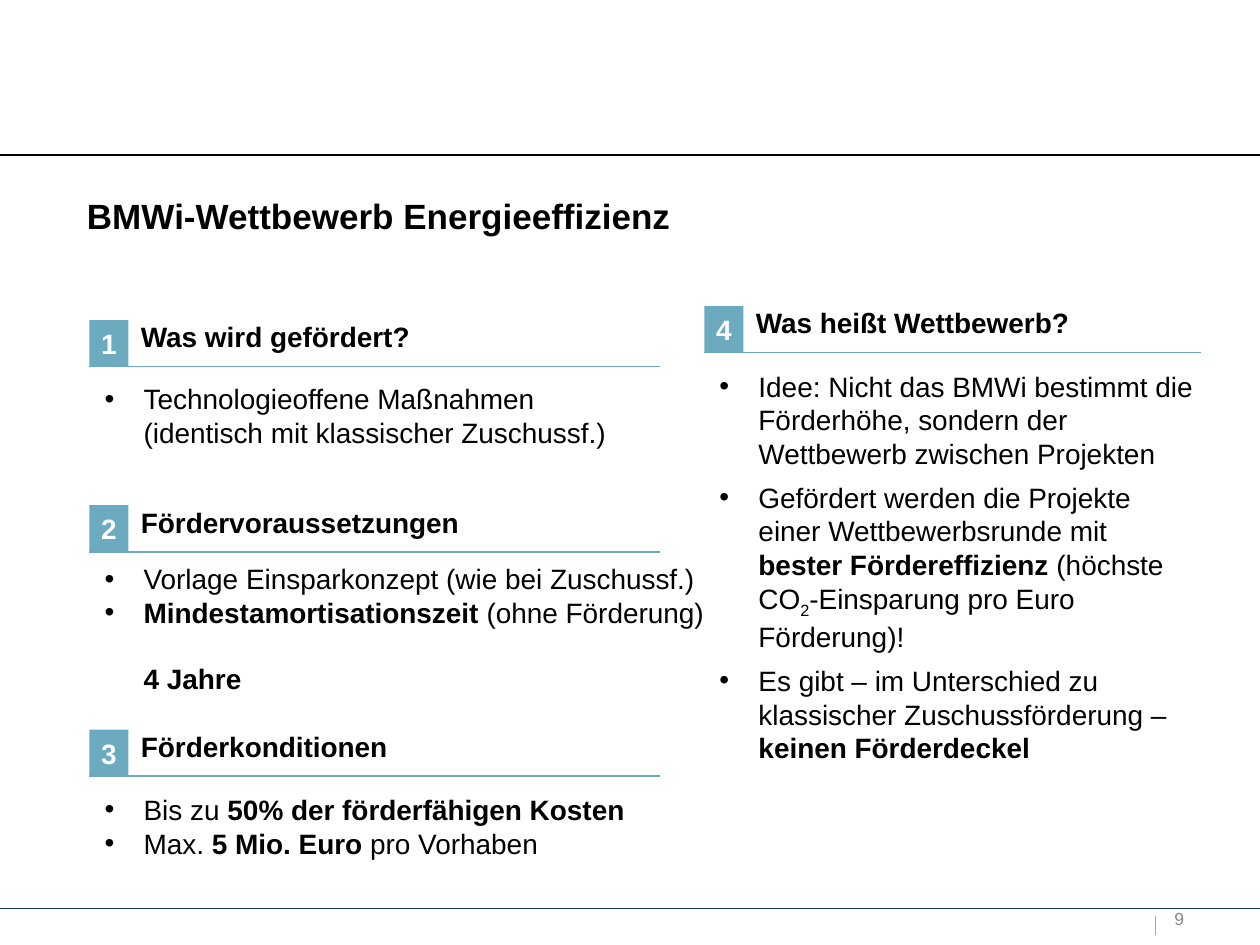
import pptx
import pptx.dml.color
import pptx.enum.shapes
import pptx.enum.text
import pptx.oxml.ns
import pptx.util
from lxml import etree
from pptx.util import Inches

FONT = "Arial"
COLORS = {
    "text": "000000",
    "white": "FFFFFF",
    "accent": "6CAAC0",
    "footer": "17375E",
    "divider": "A6A6A6",
    "number": "888888",
}
ANCHOR = pptx.enum.text.MSO_ANCHOR
ALIGN = pptx.enum.text.PP_ALIGN
INDENT = 0.31

# Each paragraph is a list of (text, style) runs; style is "", "bold" or "sub".
# The optional third entry of a paragraph tuple is the space before it.
SECTIONS = [
    {"number": "1", "heading": "Was wird gefördert?",
     "box": (0.71, 2.54, 4.53), "list_box": (0.49, 4.33, 0.54), "gap": 0,
     "items": [
         [("Technologieoffene Maßnahmen \n(identisch mit klassischer Zuschussf.)", "")],
     ]},
    {"number": "2", "heading": "Fördervoraussetzungen",
     "box": (0.71, 4.01, 4.53), "list_box": (0.45, 4.88, 0.81), "gap": 0,
     "items": [
         [("Vorlage Einsparkonzept (wie bei Zuschussf.)", "")],
         [("Mindestamortisationszeit", "bold"), (" (ohne Förderung)", "")],
     ],
     "closing": [("4 Jahre", "bold")]},
    {"number": "3", "heading": "Förderkonditionen",
     "box": (0.71, 5.79, 4.53), "list_box": (0.5, 4.88, 0.54), "gap": 0,
     "items": [
         [("Bis zu ", ""), ("50% der förderfähigen Kosten", "bold")],
         [("Max. ", ""), ("5 Mio. Euro", "bold"), (" pro Vorhaben", "")],
     ]},
    {"number": "4", "heading": "Was heißt Wettbewerb?",
     "box": (5.59, 2.43, 3.94), "list_box": (0.5, 3.78, 3.48), "gap": 6,
     "items": [
         [("Idee: Nicht das BMWi bestimmt die Förderhöhe, sondern der "
           "Wettbewerb zwischen Projekten", "")],
         [("Gefördert werden die Projekte einer Wettbewerbsrunde mit ", ""),
          ("bester Fördereffizienz ", "bold"), ("(höchste CO", ""), ("2", "sub"),
          ("-Einsparung pro Euro Förderung)!", "")],
         [("Es gibt – im Unterschied zu klassischer Zuschussförderung – ", ""),
          ("keinen Förderdeckel", "bold")],
     ]},
]


def rgb(name):
    return pptx.dml.color.RGBColor.from_string(COLORS[name])


def format_run(r, size=16, bold=False, color="text"):
    r.font.name = FONT
    r.font.size = pptx.util.Pt(size)
    r.font.bold = bold
    r.font.color.rgb = rgb(color)


def place(sp, left, top, width, height):
    sp.left, sp.top = Inches(left), Inches(top)
    sp.width, sp.height = Inches(width), Inches(height)


def format_frame(tf, inset=True, anchor=ANCHOR.TOP, wrap=True):
    tf.auto_size = pptx.enum.text.MSO_AUTO_SIZE.NONE
    tf.word_wrap = wrap
    tf.vertical_anchor = anchor
    tf.margin_left = tf.margin_right = Inches(0.1 if inset else 0)
    tf.margin_top = tf.margin_bottom = Inches(0.05 if inset else 0)


def write_line(tf, text, align=ALIGN.LEFT, **style):
    tf.text = text
    p = tf.paragraphs[0]
    p.alignment = align
    format_run(p.runs[0], **style)


def add_label(s, box, text, inset=True, **style):
    sp = s.shapes.add_textbox(*map(Inches, box))
    format_frame(sp.text_frame, inset)
    write_line(sp.text_frame, text, **style)


def add_rule(s, x1, y1, x2, y2, color):
    line = s.shapes.add_connector(
        pptx.enum.shapes.MSO_CONNECTOR.STRAIGHT, *map(Inches, (x1, y1, x2, y2)))
    line.line.color.rgb = rgb(color)
    line.line.width = pptx.util.Pt(0.75)
    etree.SubElement(line._element.spPr, pptx.oxml.ns.qn("a:effectLst"))


def write_paragraph(p, runs, space_before, bullet=True):
    pPr = p._p.get_or_add_pPr()
    pPr.set("marL", str(Inches(INDENT)))
    pPr.set("indent", str(-Inches(INDENT) if bullet else 0))
    if bullet:
        etree.SubElement(pPr, pptx.oxml.ns.qn("a:buChar")).set("char", "•")
    else:
        etree.SubElement(pPr, pptx.oxml.ns.qn("a:buNone"))
    p.alignment = ALIGN.LEFT
    p.space_before = pptx.util.Pt(space_before)
    for text, style in runs:
        for i, part in enumerate(text.split("\n")):
            if i:
                p.add_line_break()
            r = p.add_run()
            r.text = part
            format_run(r, bold=style == "bold")
            if style == "sub":
                r.font._element.set("baseline", "-25000")


def fill_list(body, section):
    tf = body.text_frame
    format_frame(tf, inset=False)
    for i, runs in enumerate(section["items"]):
        p = tf.add_paragraph() if i else tf.paragraphs[0]
        write_paragraph(p, runs, section["gap"] if i else 0)
    if "closing" in section:
        write_paragraph(tf.add_paragraph(), section["closing"], 18.4, bullet=False)


def add_section(s, body, section):
    """Numbered badge, heading, underline and bullet list."""
    left, top, width = section["box"]
    badge_w = badge_h = 0.37
    badge_w = 0.31
    sp = s.shapes.add_shape(pptx.enum.shapes.MSO_SHAPE.RECTANGLE,
                            *map(Inches, (left, top, badge_w, badge_h)))
    sp.shadow.inherit = False
    sp.fill.solid()
    sp.fill.fore_color.rgb = rgb("accent")
    sp.line.fill.background()
    format_frame(sp.text_frame, inset=False, anchor=ANCHOR.MIDDLE, wrap=False)
    write_line(sp.text_frame, section["number"], ALIGN.CENTER, bold=True, color="white")

    bottom = top + badge_h
    add_rule(s, left, bottom, left + width, bottom, "accent")
    add_label(s, (left + badge_w, top - 0.05, width - 0.4, 0.37),
              section["heading"], bold=True)
    offset, list_w, list_h = section["list_box"]
    place(body, left + 0.12, top + offset, list_w, list_h)
    fill_list(body, section)


def add_title(s):
    title = s.shapes.title
    place(title, 0.59, 1.49, 8.9, 0.44)
    format_frame(title.text_frame)
    write_line(title.text_frame, "BMWi-Wettbewerb Energieeffizienz", size=20, bold=True)


def add_frame(s):
    """Header and footer rules with the page number."""
    add_rule(s, 0, 1.23, 10, 1.23, "text")
    add_rule(s, 0, 7.21, 10, 7.21, "footer")
    add_rule(s, 9.17, 7.27, 9.17, 7.42, "divider")
    add_label(s, (9.32, 7.21, 0.64, 0.17), "9", inset=False, size=10, color="number")


def main():
    prs = pptx.Presentation()
    prs.slide_width, prs.slide_height = Inches(10), Inches(7.5)
    s = prs.slides.add_slide(prs.slide_layouts.get_by_name("Comparison"))
    bodies = [sp for sp in s.placeholders if sp.placeholder_format.idx in (1, 2, 3, 4)]
    add_frame(s)
    add_title(s)
    for body, section in zip(bodies, SECTIONS):
        add_section(s, body, section)
    prs.save("out.pptx")


if __name__ == "__main__":
    main()
